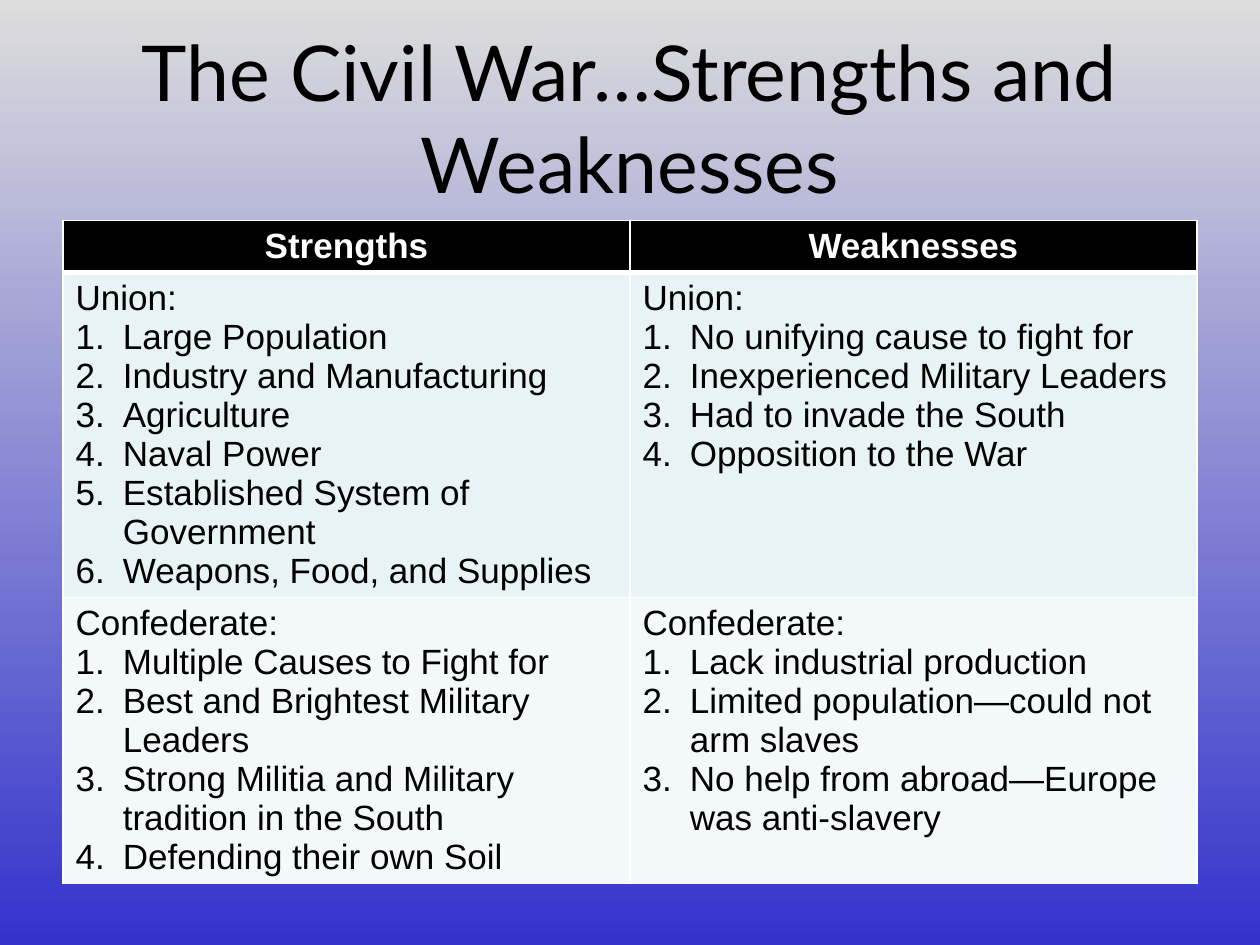
from dataclasses import dataclass

from lxml.etree import SubElement
from pptx import Presentation
from pptx.dml.color import RGBColor
from pptx.enum.text import MSO_ANCHOR, PP_ALIGN
from pptx.oxml.ns import qn
from pptx.util import Pt

HUES = {
    "top": "DDDDDD",
    "base": "3333CC",
    "black": "000000",
    "white": "FFFFFF",
    "union": "E7F3F4",
    "rebel": "F3F9FA",
}


@dataclass
class Side:
    name: str
    hue: str
    high: float
    lists: tuple[list[str], list[str]]


HEADS = ("Strengths", "Weaknesses")
HEAD_HIGH = 29.5
SIDES = [
    Side("Union:", "union", 186, (
        ["Large Population", "Industry and Manufacturing", "Agriculture",
         "Naval Power", "Established System of Government",
         "Weapons, Food, and Supplies"],
        ["No unifying cause to fight for", "Inexperienced Military Leaders",
         "Had to invade the South", "Opposition to the War"],
    )),
    Side("Confederate:", "rebel", 163.5, (
        ["Multiple Causes to Fight for", "Best and Brightest Military Leaders",
         "Strong Militia and Military tradition in the South",
         "Defending their own Soil"],
        ["Lack industrial production",
         "Limited population—could not arm slaves",
         "No help from abroad—Europe was anti-slavery"],
    )),
]


def rgb(hue: str) -> RGBColor:
    return RGBColor.from_string(HUES[hue])


def write(para, text: str, size: float, face: str, hue: str, bold: bool = False) -> None:
    run = para.add_run()
    run.text = text
    run.font.size = Pt(size)
    run.font.name = face
    run.font.bold = bold
    run.font.color.rgb = rgb(hue)


def number(para) -> None:
    props = para._p.get_or_add_pPr()
    props.set("marL", str(Pt(27)))
    props.set("indent", str(-Pt(27)))
    SubElement(props, qn("a:buFont"), typeface="+mj-lt")
    SubElement(props, qn("a:buAutoNum"), type="arabicPeriod")


def edge(cell, top: float, base: float) -> None:
    props = cell._tc.get_or_add_tcPr()
    sides = {"L": 1, "R": 1, "T": top, "B": base}
    for spot, (side, width) in enumerate(sides.items()):
        line = SubElement(props, qn(f"a:ln{side}"), w=str(Pt(width)))
        fill = SubElement(line, qn("a:solidFill"))
        SubElement(fill, qn("a:srgbClr"), val=HUES["white"])
        props.insert(spot, line)


def paint(cell, hue: str, top: float = 1, base: float = 1) -> None:
    cell.fill.solid()
    cell.fill.fore_color.rgb = rgb(hue)
    edge(cell, top, base)


def fill_head(cell, text: str) -> None:
    paint(cell, "black", base=3)
    para = cell.text_frame.paragraphs[0]
    para.alignment = PP_ALIGN.CENTER
    write(para, text, 20, "Arial", "white", True)


def fill_side(cell, side: Side, items: list[str], top: float) -> None:
    paint(cell, side.hue, top=top)
    frame = cell.text_frame
    write(frame.paragraphs[0], side.name, 20, "Arial", "black")
    for item in items:
        para = frame.add_paragraph()
        number(para)
        write(para, item, 20, "Arial", "black")


def add_grid(slide) -> None:
    highs = [HEAD_HIGH] + [side.high for side in SIDES]
    grid = slide.shapes.add_table(
        len(highs), len(HEADS), Pt(36), Pt(126), Pt(648), Pt(sum(highs))
    ).table
    for row, high in zip(grid.rows, highs):
        row.height = Pt(high)
    for col, head in enumerate(HEADS):
        fill_head(grid.cell(0, col), head)
        for row, side in enumerate(SIDES, 1):
            fill_side(grid.cell(row, col), side, side.lists[col], 3 if row == 1 else 1)


def add_title(slide) -> None:
    title = slide.shapes.title
    title.left, title.top, title.width, title.height = Pt(36), Pt(21.6), Pt(648), Pt(90)
    frame = title.text_frame
    frame.vertical_anchor = MSO_ANCHOR.MIDDLE
    para = frame.paragraphs[0]
    para.alignment = PP_ALIGN.CENTER
    write(para, "The Civil War…Strengths and Weaknesses", 44, "Lato", "black")


def add_back(slide) -> None:
    fill = slide.background.fill
    fill.gradient()
    fill.gradient_angle = 270
    for stop, hue, spot in zip(fill.gradient_stops, ("top", "base"), (0, 1)):
        stop.color.rgb = rgb(hue)
        stop.position = spot


def main() -> None:
    deck = Presentation()
    deck.slide_width, deck.slide_height = Pt(720), Pt(540)
    slide = deck.slides.add_slide(deck.slide_layouts[5])
    add_back(slide)
    add_title(slide)
    add_grid(slide)
    deck.save("out.pptx")


if __name__ == "__main__":
    main()
